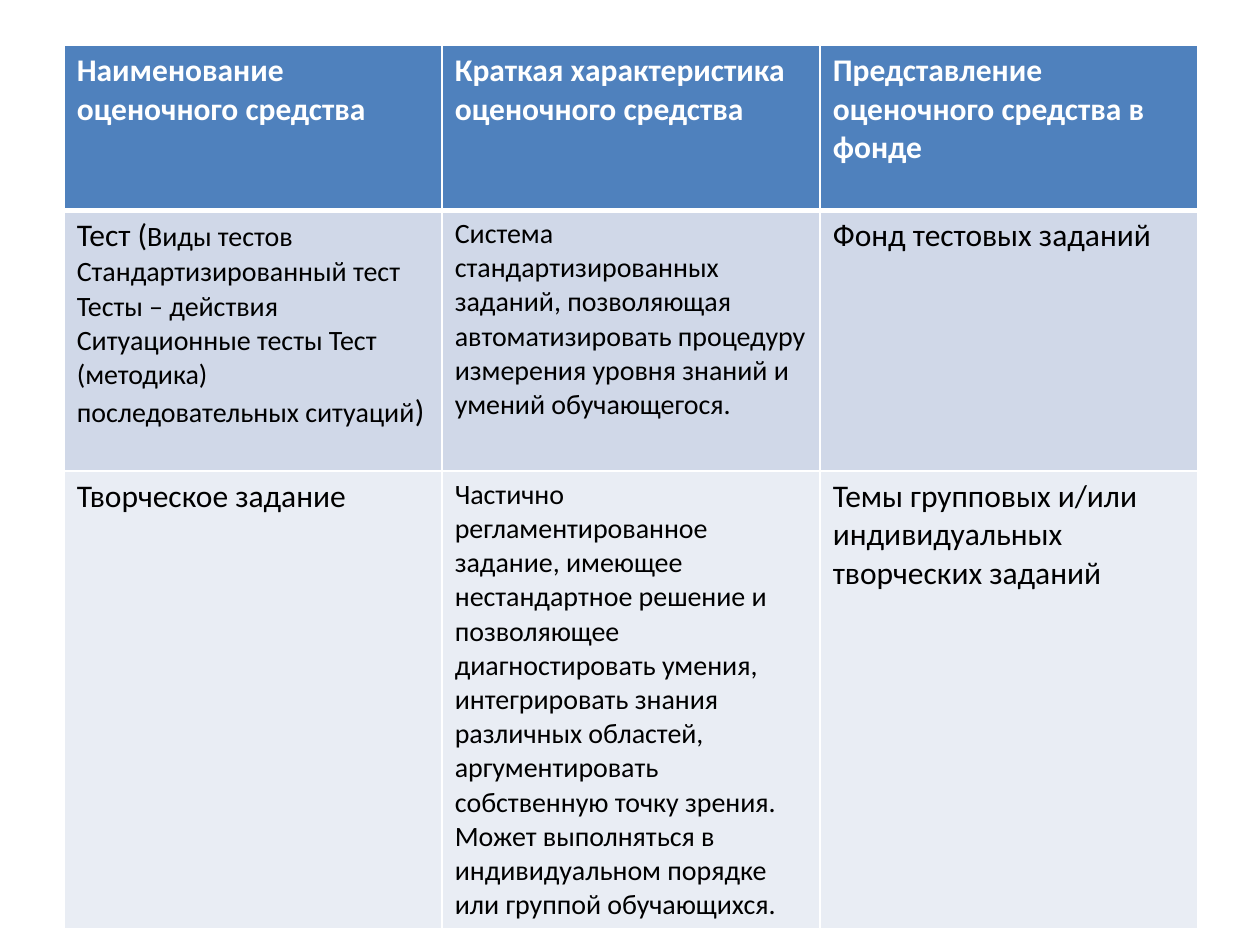
from lxml.etree import SubElement
from pptx import Presentation
from pptx.dml.color import RGBColor
from pptx.oxml.ns import qn
from pptx.util import Inches, Pt

WHITE = RGBColor(0xFF, 0xFF, 0xFF)
BLACK = RGBColor(0x00, 0x00, 0x00)
HEADER_BLUE = RGBColor(0x4F, 0x81, 0xBD)
BAND_DARK = RGBColor(0xD0, 0xD8, 0xE8)
BAND_LIGHT = RGBColor(0xE9, 0xED, 0xF4)

FONT = "Calibri"
LARGE, SMALL = 18, 16
COLUMN_WIDTH = 3
ROW_HEIGHTS = [1.31, 2.07, 3.63]
ROW_FILLS = [HEADER_BLUE, BAND_DARK, BAND_LIGHT]

# Each cell is a list of (text, size) runs.
ROWS = [
    [
        [("Наименование \nоценочного средства", LARGE)],
        [("Краткая характеристика оценочного средства", LARGE)],
        [("Представление оценочного средства в фонде", LARGE)],
    ],
    [
        [
            ("Тест (", LARGE),
            ("Виды тестов Стандартизированный тест Тесты – действия "
             "Ситуационные тесты Тест (методика) последовательных ситуаций", SMALL),
            (")", LARGE),
        ],
        [("Система стандартизированных заданий, позволяющая автоматизировать "
          "процедуру измерения уровня знаний и умений обучающегося.", SMALL)],
        [("Фонд тестовых заданий", LARGE)],
    ],
    [
        [("Творческое задание", LARGE)],
        [("Частично регламентированное задание, имеющее нестандартное решение и "
          "позволяющее диагностировать умения, интегрировать знания различных "
          "областей, аргументировать собственную точку зрения. Может выполняться "
          "в индивидуальном порядке или группой обучающихся.", SMALL)],
        [("Темы групповых и/или индивидуальных творческих заданий", LARGE)],
    ],
]


def add_run(para, text, size, color, bold):
    """Add text to the paragraph, turning newlines into line breaks."""
    for index, line in enumerate(text.split("\n")):
        if index:
            para.add_line_break()
        span = para.add_run()
        span.text = line
        span.font.name = FONT
        span.font.size = Pt(size)
        span.font.bold = bold
        span.font.color.rgb = color


def set_borders(cell, top, bottom):
    """Draw white borders; top and bottom widths are in points."""
    properties = cell._tc.get_or_add_tcPr()
    for side, width in (("L", 1), ("R", 1), ("T", top), ("B", bottom)):
        line = SubElement(properties, qn(f"a:ln{side}"), w=str(Pt(width)))
        fill = SubElement(line, qn("a:solidFill"))
        SubElement(fill, qn("a:srgbClr"), val=str(WHITE))


def fill_cell(cell, runs, row_index):
    is_header = row_index == 0
    set_borders(cell, top=3 if row_index == 1 else 1, bottom=3 if is_header else 1)
    cell.fill.solid()
    cell.fill.fore_color.rgb = ROW_FILLS[row_index]
    para = cell.text_frame.paragraphs[0]
    for text, size in runs:
        add_run(para, text, size, WHITE if is_header else BLACK, is_header)


def add_assessment_table(page):
    column_count = len(ROWS[0])
    frame = page.shapes.add_table(
        len(ROWS), column_count, Inches(0.51), Inches(0.36),
        Inches(COLUMN_WIDTH * column_count), Inches(sum(ROW_HEIGHTS)))
    table = frame.table
    for column in table.columns:
        column.width = Inches(COLUMN_WIDTH)
    for row_index, cells in enumerate(ROWS):
        table.rows[row_index].height = Inches(ROW_HEIGHTS[row_index])
        for column_index, runs in enumerate(cells):
            fill_cell(table.cell(row_index, column_index), runs, row_index)


def main():
    deck = Presentation()
    deck.slide_width = Inches(10)
    deck.slide_height = Inches(7.5)
    page = deck.slides.add_slide(deck.slide_layouts[6])
    add_assessment_table(page)
    deck.save("out.pptx")


if __name__ == "__main__":
    main()
